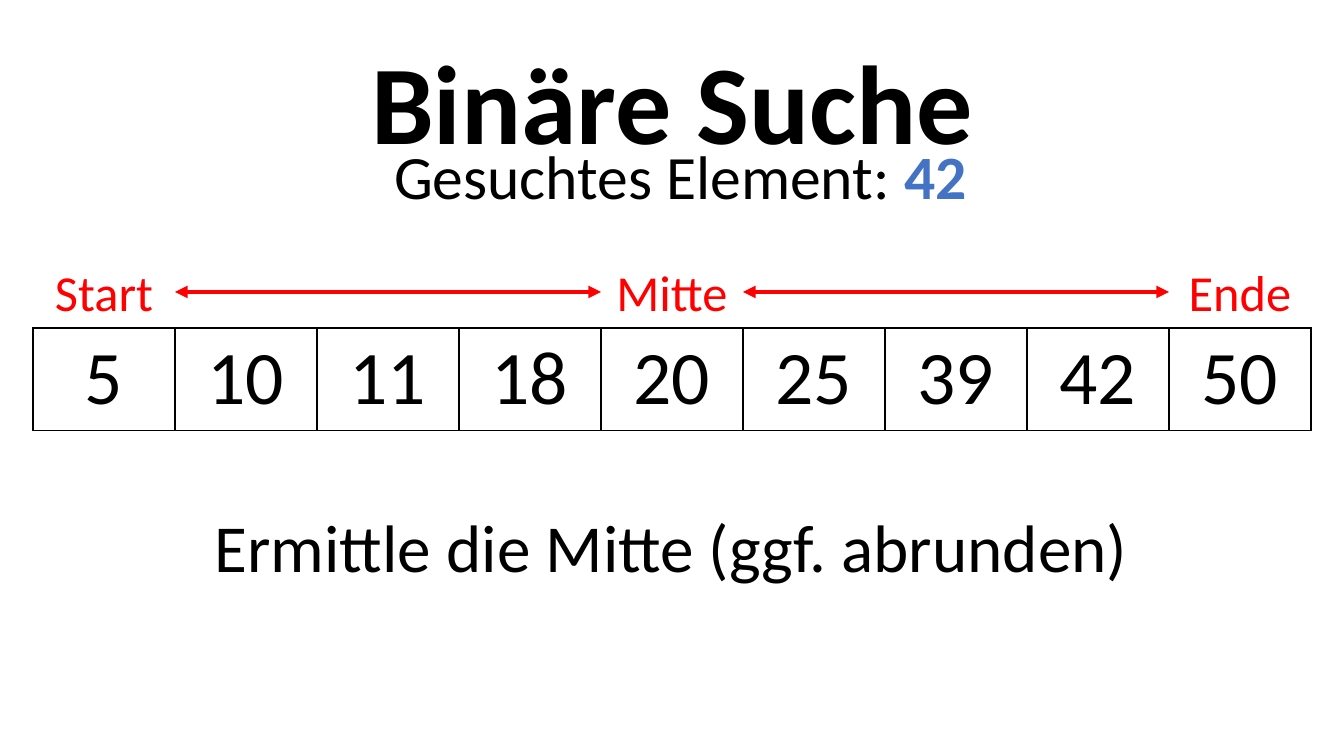
"""Build a slide that explains the first step of a binary search."""
from dataclasses import dataclass

from lxml import etree
from pptx import Presentation, util as u
from pptx.dml.color import RGBColor
from pptx.enum import shapes, text
from pptx.oxml import ns

PX = 914400 / 100.8
LEFT, COL = 33, 142
VALUES = [5, 10, 11, 18, 20, 25, 39, 42, 50]
MARKS = {0: "Start", 4: "Mitte", 8: "Ende"}


@dataclass(frozen=True)
class Theme:
    """Hold the font, colours and type sizes."""
    font: str = "Calibri"
    ink: str = "000000"
    mark: str = "FF0000"
    accent: str = "4472C4"
    title: int = 80
    value: int = 54
    step: int = 48
    goal: int = 44
    label: int = 36


THEME = Theme()


def px(num):
    """Turn pixels into EMU."""
    return u.Emu(round(num * PX))


def column(index):
    """Give the left edge of an array column."""
    return LEFT + index * COL


def style(run, size, color, bold=False):
    """Format one run."""
    font = run.font
    font.name, font.size, font.bold = THEME.font, u.Pt(size), bold
    font.color.rgb = RGBColor.from_string(color)


def label(slide, box, words, size, color=THEME.ink, bold=False):
    """Add a centred text box and return its paragraph."""
    frame = slide.shapes.add_textbox(*map(px, box)).text_frame
    frame.word_wrap = True
    para = frame.paragraphs[0]
    para.text = words
    para.alignment = text.PP_ALIGN.CENTER
    style(para.runs[0], size, color, bold)
    return para


def title(slide, box, words):
    """Add the heading, centred in its box."""
    para = label(slide, box, words, THEME.title, bold=True)
    para.line_spacing = 0.9
    slide.shapes[-1].text_frame.vertical_anchor = text.MSO_ANCHOR.MIDDLE


def border(cell):
    """Draw a thin line on all four sides of a cell."""
    props = cell._tc.get_or_add_tcPr()
    for spot, side in enumerate("LRTB"):
        line = etree.Element(ns.qn(f"a:ln{side}"), w=str(u.Pt(1)))
        fill = etree.SubElement(line, ns.qn("a:solidFill"))
        etree.SubElement(fill, ns.qn("a:srgbClr"), val=THEME.ink)
        props.insert(spot, line)


def array(slide, top, height):
    """Add the sorted values as a one-row table."""
    count = len(VALUES)
    box = map(px, (LEFT, top, count * COL, height))
    table = slide.shapes.add_table(1, count, *box).table
    table.first_row = table.horz_banding = False
    for index, value in enumerate(VALUES):
        table.columns[index].width = px(COL)
        cell = table.cell(0, index)
        cell.fill.background()
        border(cell)
        para = cell.text_frame.paragraphs[0]
        para.text = str(value)
        para.alignment = text.PP_ALIGN.CENTER
        style(para.runs[0], THEME.value, THEME.ink)


def arrow(slide, start, end, top):
    """Add a level line with a head at both ends."""
    ends = map(px, (start, top, end, top))
    link = slide.shapes.add_connector(shapes.MSO_CONNECTOR.STRAIGHT, *ends)
    link.line.width = u.Pt(3)
    link.line.color.rgb = RGBColor.from_string(THEME.mark)
    line = link.line._get_or_add_ln()
    for end_tag in ("a:headEnd", "a:tailEnd"):
        etree.SubElement(line, ns.qn(end_tag), type="triangle")
    etree.SubElement(link._element.spPr, ns.qn("a:effectLst"))


def main():
    """Build and save the slide."""
    deck = Presentation()
    deck.slide_width, deck.slide_height = px(1344), px(756)
    slide = deck.slides.add_slide(deck.slide_layouts[6])

    array(slide, 328, 101)
    title(slide, (93, 40, 1159, 136), "Binäre Suche")
    for index, words in MARKS.items():
        box = (column(index), 256, COL, 72)
        label(slide, box, words, THEME.label, THEME.mark)
    spots = list(MARKS)
    for start, end in zip(spots, spots[1:]):
        arrow(slide, column(start + 1), column(end), 292)

    goal = label(slide, (373, 133, 615, 85), "Gesuchtes Element: ", THEME.goal)
    sought = goal.add_run()
    sought.text = "42"
    style(sought, THEME.goal, THEME.accent, bold=True)
    label(slide, (173, 500, 997, 92), "Ermittle die Mitte (ggf. abrunden)",
          THEME.step)

    deck.save("out.pptx")


if __name__ == "__main__":
    main()
